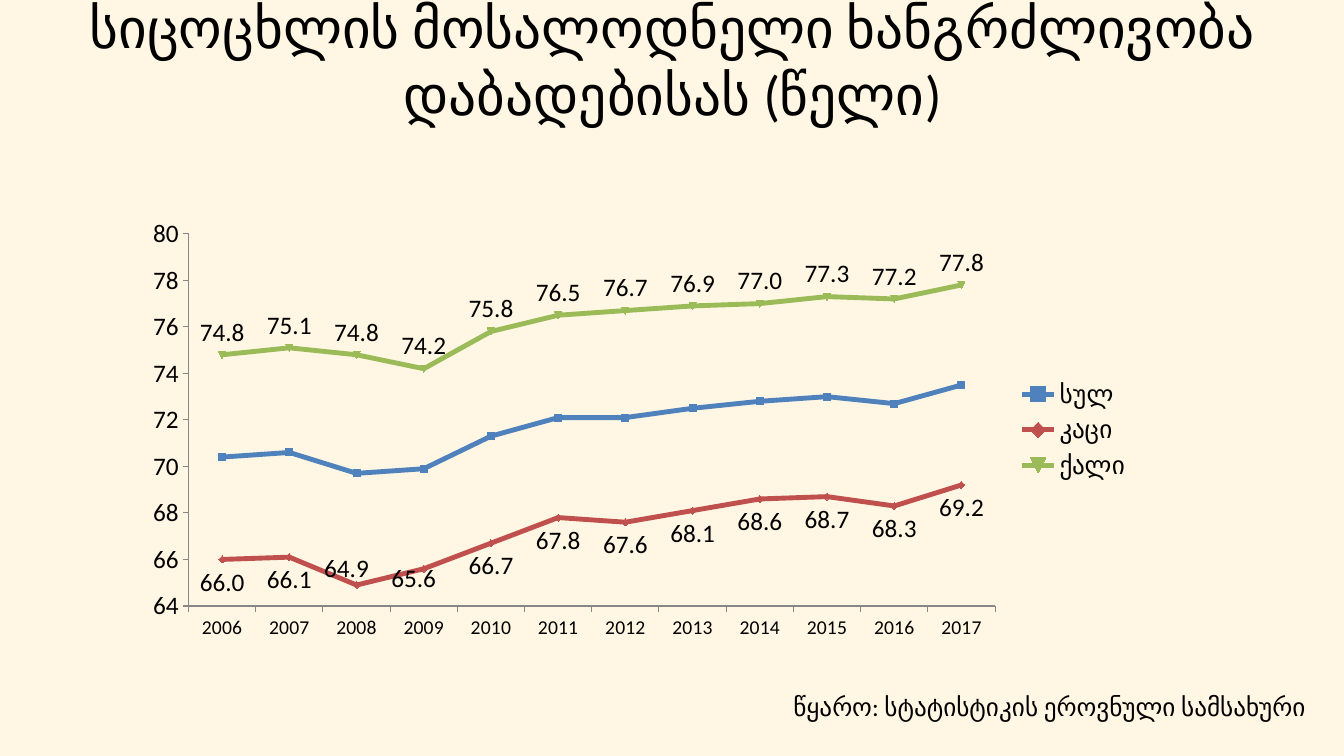
from lxml.etree import SubElement
from pptx import Presentation
from pptx.chart.data import CategoryChartData
from pptx.dml.color import RGBColor
from pptx.enum.chart import XL_CHART_TYPE, XL_LABEL_POSITION, XL_LEGEND_POSITION, XL_TICK_MARK
from pptx.enum.text import MSO_ANCHOR, MSO_AUTO_SIZE, PP_ALIGN
from pptx.oxml.ns import qn
from pptx.util import Inches, Pt

FONT = "Calibri"
COLORS = {
    "background": "FFF6E3",
    "text": "000000",
    "axis": "878787",
    "total": "4F81BD",
    "men": "C0504D",
    "women": "9BBB59",
}
YEARS = [str(year) for year in range(2006, 2018)]
LIFE_EXPECTANCY = [
    ("სულ ", "total", None,
     [70.4, 70.6, 69.7, 69.9, 71.3, 72.1, 72.1, 72.5, 72.8, 73, 72.7, 73.5]),
    ("კაცი", "men", XL_LABEL_POSITION.BELOW,
     [66, 66.1, 64.9, 65.6, 66.7, 67.8, 67.6, 68.1, 68.6, 68.7, 68.3, 69.2]),
    ("ქალი", "women", XL_LABEL_POSITION.ABOVE,
     [74.8, 75.1, 74.8, 74.2, 75.8, 76.5, 76.7, 76.9, 77, 77.3, 77.2, 77.8]),
]
MOVED_MEN_LABELS = {2: (-0.01, -0.09), 3: (-0.01, -0.03)}


def color(name):
    return RGBColor.from_string(COLORS[name])


def style_font(font, size):
    font.name = FONT
    font.size = Pt(size)
    font.color.rgb = color("text")


def add_manual_layout(layout, **settings):
    manual = SubElement(layout, qn("c:manualLayout"))
    for tag, value in settings.items():
        SubElement(manual, qn(f"c:{tag}")).set("val", str(value))


def fill_title(slide, left, top, width, height):
    title = slide.shapes.title
    title.left, title.top = Inches(left), Inches(top)
    title.width, title.height = Inches(width), Inches(height)
    frame = title.text_frame
    frame.word_wrap = True
    frame.auto_size = MSO_AUTO_SIZE.NONE
    frame.vertical_anchor = MSO_ANCHOR.MIDDLE
    heading = frame.paragraphs[0]
    heading.alignment = PP_ALIGN.CENTER
    run = heading.add_run()
    run.text = "სიცოცხლის მოსალოდნელი ხანგრძლივობა დაბადებისას (წელი)"
    style_font(run.font, 39.6)
    heading.add_line_break()
    heading.font.size = Pt(39.6)


def style_axes(chart):
    years, ages = chart.category_axis, chart.value_axis
    for axis, size in ((years, 14), (ages, 18)):
        axis.has_major_gridlines = False
        axis.major_tick_mark = XL_TICK_MARK.OUTSIDE
        axis.minor_tick_mark = XL_TICK_MARK.NONE
        axis.format.line.color.rgb = color("axis")
        style_font(axis.tick_labels.font, size)
    ages.minimum_scale = 64
    ages.maximum_scale = 80
    ages.major_unit = 2
    ages.tick_labels.number_format = "#,##0"
    ages.tick_labels.number_format_is_linked = False


def label_series(series, position):
    labels = series.data_labels
    labels.show_value = True
    labels.position = position
    labels.number_format = "0.0"
    labels.number_format_is_linked = False
    style_font(labels.font, 18)


def move_label(series, index, x, y):
    label = series.points[index].data_label
    style_font(label.font, 18)
    label.position = XL_LABEL_POSITION.BELOW
    element = series.data_labels._element.find(qn("c:dLbl") + f"[{index - 1}]")
    layout = SubElement(element, qn("c:layout"))
    add_manual_layout(layout, x=x, y=y)
    number_format = SubElement(element, qn("c:numFmt"))
    number_format.set("formatCode", "0.0")
    number_format.set("sourceLinked", "0")
    element.insert(1, layout)
    element.insert(2, number_format)


def add_life_chart(slide, left, top, width, height):
    data = CategoryChartData(number_format="0.0")
    data.categories = YEARS
    for name, _, _, values in LIFE_EXPECTANCY:
        data.add_series(name, values)
    chart = slide.shapes.add_chart(
        XL_CHART_TYPE.LINE_MARKERS, Inches(left), Inches(top),
        Inches(width), Inches(height), data).chart
    style_font(chart.font, 18)
    chart.has_title = False
    chart.has_legend = True
    chart.legend.position = XL_LEGEND_POSITION.RIGHT
    chart.legend.include_in_layout = False
    style_font(chart.legend.font, 18)
    style_axes(chart)
    for series, (_, tone, position, _) in zip(chart.plots[0].series, LIFE_EXPECTANCY):
        series.smooth = False
        series.format.line.color.rgb = color(tone)
        series.format.line.width = Pt(3.5)
        series.marker.format.fill.solid()
        series.marker.format.fill.fore_color.rgb = color(tone)
        series.marker.format.line.color.rgb = color(tone)
        if position is not None:
            label_series(series, position)
        if tone == "men":
            for index, (x, y) in MOVED_MEN_LABELS.items():
                move_label(series, index, x, y)
    plot_area = chart._chartSpace.chart.plotArea
    layout = plot_area.find(qn("c:layout"))
    if layout is None:
        layout = SubElement(plot_area, qn("c:layout"))
        plot_area.insert(0, layout)
    add_manual_layout(layout, layoutTarget="inner", xMode="edge", yMode="edge",
                      x=0.055, y=0.055, w=0.8, h=0.845)


def add_source_note(slide, left, top, width, height):
    note = slide.shapes.add_textbox(
        Inches(left), Inches(top), Inches(width), Inches(height))
    frame = note.text_frame
    frame.word_wrap = False
    frame.auto_size = MSO_AUTO_SIZE.SHAPE_TO_FIT_TEXT
    run = frame.paragraphs[0].add_run()
    run.text = "წყარო: სტატისტიკის ეროვნული სამსახური"
    style_font(run.font, 18)


def main():
    presentation = Presentation()
    presentation.slide_width = Inches(13.33)
    presentation.slide_height = Inches(7.5)
    slide = presentation.slides.add_slide(presentation.slide_layouts[5])
    slide.background.fill.solid()
    slide.background.fill.fore_color.rgb = color("background")
    fill_title(slide, 0.67, 0.3, 12, 1.25)
    add_life_chart(slide, 1.32, 2.08, 10, 4.37)
    add_source_note(slide, 7.77, 6.81, 5.33, 0.4)
    presentation.save("out.pptx")


if __name__ == "__main__":
    main()
